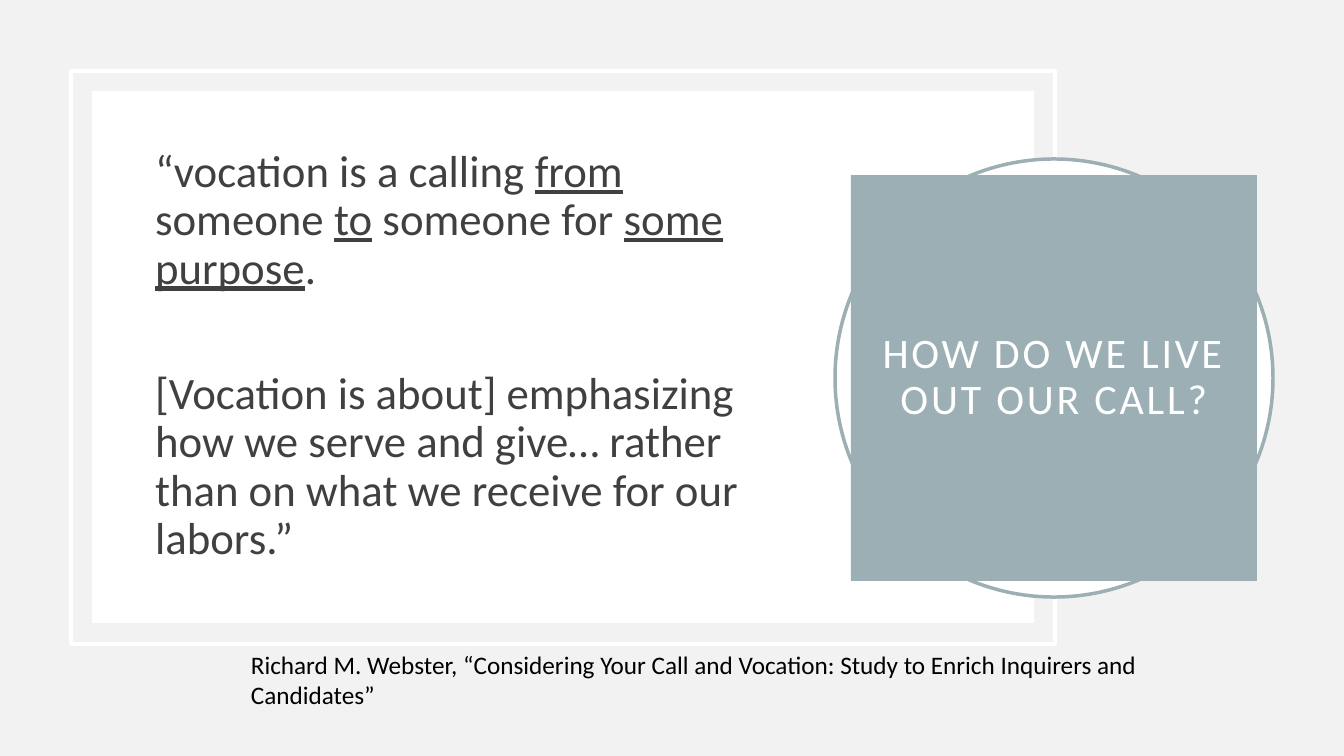
from dataclasses import dataclass, field

import pptx
import pptx.dml.color
import pptx.enum.shapes
import pptx.enum.text
import pptx.util
from lxml import etree

SHAPE = pptx.enum.shapes.MSO_SHAPE
ALIGN = pptx.enum.text.PP_ALIGN
ANCHOR = pptx.enum.text.MSO_ANCHOR
AUTO = pptx.enum.text.MSO_AUTO_SIZE

PALE, WHITE, TEAL, DARK, BLACK = "F2F2F2", "FFFFFF", "9BAFB5", "404040", "000000"
Box = tuple[int, int, int, int]


@dataclass
class Panel:
    kind: SHAPE
    box: Box
    fill: str = ""
    line: str = ""


@dataclass
class Style:
    size: int
    color: str
    spacing: int = 0  # letter spacing, hundredths of a point
    para: dict = field(default_factory=dict)
    frame: dict = field(default_factory=dict)


def px(n: int) -> int:
    return round(n * 914400 / 100.8)


def rgb(color: str) -> pptx.dml.color.RGBColor:
    return pptx.dml.color.RGBColor.from_string(color)


def apply(target: object, values: dict) -> None:
    for name, value in values.items():
        setattr(target, name, value)


def place(sp: object, box: Box) -> None:
    """Set the position and bring the shape to the front."""
    apply(sp, dict(zip(("left", "top", "width", "height"), map(px, box))))
    sp.element.getparent().append(sp.element)


def draw_panel(s: object, panel: Panel) -> None:
    sp = s.shapes.add_shape(panel.kind, *map(px, panel.box))
    sp.shadow.inherit = False
    if panel.fill:
        sp.fill.solid()
        sp.fill.fore_color.rgb = rgb(panel.fill)
    else:
        sp.fill.background()
    if panel.line:
        sp.line.color.rgb = rgb(panel.line)
        sp.line.width = pptx.util.Pt(2.5)
    else:
        sp.line.fill.background()


def write(sp: object, paragraphs: list[list[tuple[str, bool]]], style: Style) -> None:
    """Write paragraphs of (text, underlined) runs."""
    tf = sp.text_frame
    apply(tf, {"word_wrap": True, "auto_size": AUTO.NONE} | style.frame)
    for i, runs in enumerate(paragraphs):
        p = tf.add_paragraph() if i else tf.paragraphs[0]
        apply(p, style.para)
        for text, underlined in runs:
            r = p.add_run()
            r.text = text
            apply(r.font, {"name": "Calibri", "size": pptx.util.Pt(style.size),
                           "underline": underlined})
            r.font.color.rgb = rgb(style.color)
            if style.spacing:
                r.font._element.set("spc", str(style.spacing))


def remove_bullet(p: object) -> None:
    ppr = p._p.get_or_add_pPr()
    ppr.set("marL", "0")
    ppr.set("indent", "0")
    etree.SubElement(ppr, pptx.oxml.ns.qn("a:buNone"))


FRAMES = [
    Panel(SHAPE.RECTANGLE, (71, 71, 984, 573), line=WHITE),
    Panel(SHAPE.RECTANGLE, (92, 91, 942, 532), fill=WHITE),
]
RING = Panel(SHAPE.OVAL, (835, 159, 438, 438), fill=WHITE, line=TEAL)

QUOTE = [
    [("“vocation is a calling ", False), ("from ", True), ("someone ", False),
     ("to", True), (" someone for ", False), ("some purpose", True), (".", False)],
    [("[Vocation is about] emphasizing how we serve and give… rather than on "
      "what we receive for our labors.”", False)],
]
TITLE = "HOW DO WE LIVE OUT OUR CALL?"
CITATION = ("Richard M. Webster, “Considering Your Call and Vocation: "
            "Study to Enrich Inquirers and Candidates”")

QUOTE_STYLE = Style(32, DARK, para={"line_spacing": 0.9, "space_before": pptx.util.Pt(10)},
                    frame={"vertical_anchor": ANCHOR.MIDDLE})
INSETS = dict.fromkeys(("margin_left", "margin_right", "margin_top", "margin_bottom"), px(20))
TITLE_STYLE = Style(30, WHITE, spacing=200,
                    para={"line_spacing": 0.9, "alignment": ALIGN.CENTER},
                    frame={"vertical_anchor": ANCHOR.MIDDLE} | INSETS)
CITATION_STYLE = Style(18, BLACK)


def main() -> None:
    prs = pptx.Presentation()
    prs.slide_width, prs.slide_height = px(1344), px(756)
    s = prs.slides.add_slide(prs.slide_layouts[1])
    s.background.fill.solid()
    s.background.fill.fore_color.rgb = rgb(PALE)

    # Framed quotation
    for panel in FRAMES:
        draw_panel(s, panel)
    body = s.placeholders[1]
    place(body, (145, 141, 630, 431))
    write(body, QUOTE, QUOTE_STYLE)
    for p in body.text_frame.paragraphs:
        remove_bullet(p)
    body.text_frame.paragraphs[1].space_before = pptx.util.Pt(55)

    # Title block over its ring
    draw_panel(s, RING)
    title = s.shapes.title
    place(title, (851, 175, 406, 406))
    title.fill.solid()
    title.fill.fore_color.rgb = rgb(TEAL)
    write(title, [[(TITLE, False)]], TITLE_STYLE)

    # Citation
    citation = s.shapes.add_textbox(*map(px, (241, 644, 1030, 40)))
    write(citation, [[(CITATION, False)]], CITATION_STYLE)

    prs.save("out.pptx")


if __name__ == "__main__":
    main()
